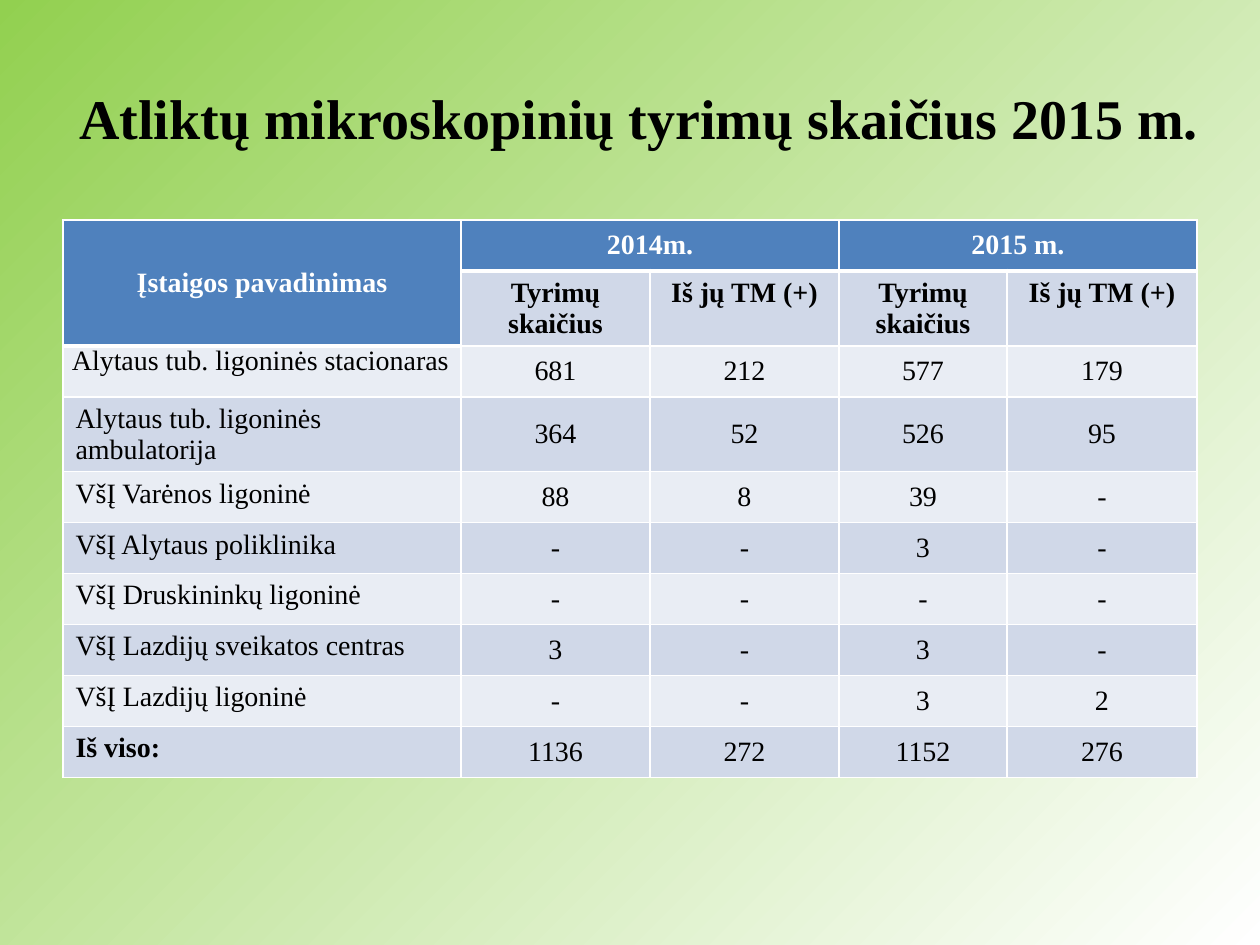
from dataclasses import dataclass

from lxml import etree
from pptx import Presentation
from pptx.dml.color import RGBColor
from pptx.enum.text import MSO_ANCHOR, PP_ALIGN
from pptx.oxml.ns import qn
from pptx.util import Emu, Pt

MIDDLE, TOP = MSO_ANCHOR.MIDDLE, MSO_ANCHOR.TOP
CENTER, LEFT = PP_ALIGN.CENTER, PP_ALIGN.LEFT

PX_PER_INCH = 126
FONT = "Times New Roman"
COLORS = {
    "green": "92D050",
    "white": "FFFFFF",
    "black": "000000",
    "header": "4F81BD",
    "dark_band": "D0D8E8",
    "light_band": "E9EDF4",
}
COLUMN_WIDTHS = [398, 189, 189, 168, 190]
ROW_HEIGHT = 51
THIN, THICK = 1, 3

# Spanned cells stay empty
ROWS = [
    ["Įstaigos pavadinimas", "2014m.", "", "2015 m.", ""],
    [""] + ["Tyrimų skaičius", "Iš jų TM (+)"] * 2,
    ["Alytaus tub. ligoninės stacionaras", "681", "212", "577", "179"],
    ["Alytaus tub. ligoninės ambulatorija", "364", "52", "526", "95"],
    ["VšĮ Varėnos ligoninė", "88", "8", "39", "-"],
    ["VšĮ Alytaus poliklinika", "-", "-", "3", "-"],
    ["VšĮ Druskininkų ligoninė", "-", "-", "-", "-"],
    ["VšĮ Lazdijų sveikatos centras", "3", "-", "3", "-"],
    ["VšĮ Lazdijų ligoninė", "-", "-", "3", "2"],
    ["Iš viso:", "1136", "272", "1152", "276"],
]
MERGES = [((0, 0), (1, 0)), ((0, 1), (0, 2)), ((0, 3), (0, 4))]


@dataclass(frozen=True)
class CellStyle:
    fill: str
    color: str
    bold: bool
    align: PP_ALIGN
    anchor: MSO_ANCHOR
    top: int
    bottom: int


def px(length: int) -> Emu:
    return Emu(round(length * 914400 / PX_PER_INCH))


def rgb(name: str) -> RGBColor:
    return RGBColor.from_string(COLORS[name])


def format_text(frame, size: int, color: str, bold: bool, align: PP_ALIGN) -> None:
    for para in frame.paragraphs:
        para.alignment = align
        for span in para.runs:
            span.font.name = FONT
            span.font.size = Pt(size)
            span.font.bold = bold
            span.font.color.rgb = rgb(color)


def is_header(row: int, column: int) -> bool:
    return row == 0 or (row, column) == (1, 0)


def style_for(row: int, column: int) -> CellStyle:
    header = is_header(row, column)
    band = "dark_band" if row % 2 else "light_band"
    first = column == 0
    last = row == len(ROWS) - 1
    return CellStyle(
        fill="header" if header else band,
        color="white" if header else "black",
        bold=row < 2 or (first and last),
        align=LEFT if first and not header else CENTER,
        anchor=MIDDLE if header or (row > 1 and not first) else TOP,
        top=THICK if row and is_header(row - 1, column) else THIN,
        bottom=THICK if header else THIN,
    )


def add_border(cell, side: str, width: int) -> None:
    line = etree.SubElement(cell._tc.get_or_add_tcPr(), qn(f"a:ln{side}"), w=str(Pt(width)))
    fill = etree.SubElement(line, qn("a:solidFill"))
    etree.SubElement(fill, qn("a:srgbClr"), val=COLORS["white"])


def format_cell(cell, text: str, style: CellStyle) -> None:
    widths = {"L": THIN, "R": THIN, "T": style.top, "B": style.bottom}
    for side, width in widths.items():
        add_border(cell, side, width)
    cell.fill.solid()
    cell.fill.fore_color.rgb = rgb(style.fill)
    cell.vertical_anchor = style.anchor
    cell.text_frame.text = text
    format_text(cell.text_frame, 16, style.color, style.bold, style.align)


def add_results_table(page) -> None:
    frame = page.shapes.add_table(
        len(ROWS), len(COLUMN_WIDTHS), px(63), px(220),
        px(sum(COLUMN_WIDTHS)), px(ROW_HEIGHT * len(ROWS)))
    table = frame.table
    for column, width in zip(table.columns, COLUMN_WIDTHS):
        column.width = px(width)
    for row in table.rows:
        row.height = px(ROW_HEIGHT)
    for r, texts in enumerate(ROWS):
        for c, text in enumerate(texts):
            format_cell(table.cell(r, c), text, style_for(r, c))
    for start, end in MERGES:
        table.cell(*start).merge(table.cell(*end))

    # The first institution has tighter margins
    tight = table.cell(2, 0)
    tight.margin_left = tight.margin_right = px(9)
    tight.margin_top = tight.margin_bottom = 0


def set_background(page) -> None:
    fill = page.background.fill
    fill.gradient()
    fill.gradient_angle = 315
    for stop, color, position in zip(fill.gradient_stops, ("green", "white"), (0, 1)):
        stop.color.rgb = rgb(color)
        stop.position = position


def set_title(page) -> None:
    title = page.shapes.title
    title.left, title.top, title.width, title.height = map(px, (63, 38, 1153, 158))
    title.text_frame.text = "Atliktų mikroskopinių tyrimų skaičius 2015 m."
    title.text_frame.word_wrap = True
    title.text_frame.vertical_anchor = MIDDLE
    format_text(title.text_frame, 32, "black", True, CENTER)


def main() -> None:
    deck = Presentation()
    deck.slide_width, deck.slide_height = px(1260), px(945)
    page = deck.slides.add_slide(deck.slide_layouts.get_by_name("Title Only"))
    set_background(page)
    set_title(page)
    add_results_table(page)
    deck.save("out.pptx")


if __name__ == "__main__":
    main()
